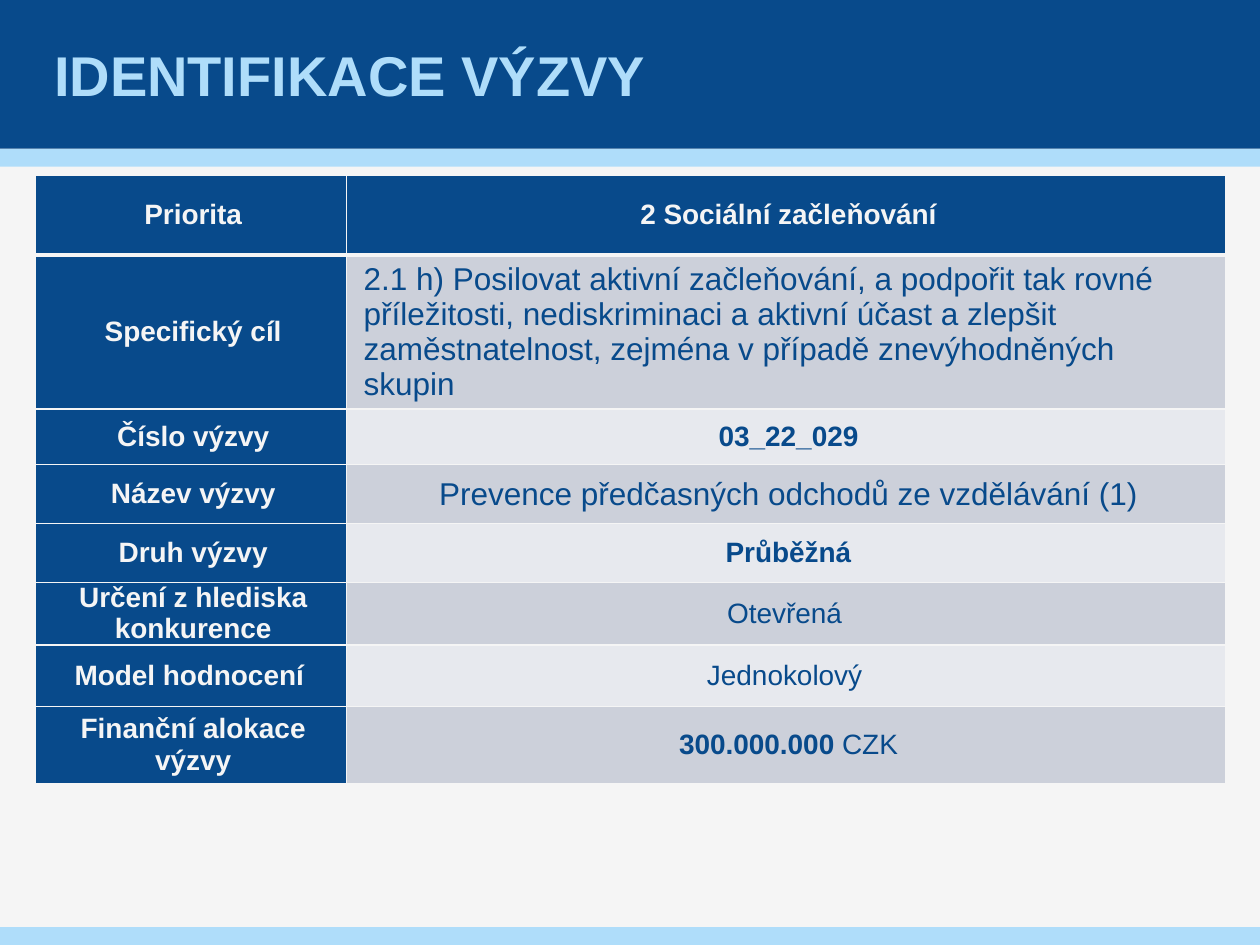
from lxml import etree
from pptx import Presentation
from pptx import util as u
from pptx.dml.color import RGBColor
from pptx.enum import shapes, text
from pptx.oxml.ns import qn

NAVY, SKY, PAPER = "084A8B", "AFDDFA", "F5F5F5"
BANDS = ("E7E9EE", "CCD0DA")
COLUMN_WIDTHS = (6.27, 17.73)
LEFT, CENTER = text.PP_ALIGN.LEFT, text.PP_ALIGN.CENTER

# Row height in cm, label, value as (wording, bold) spans, value format
ROWS = [
    (1.6, "Priorita", [("2 Sociální začleňování", True)], {}),
    (2.62, "Specifický cíl",
     [("2.1 h) Posilovat aktivní začleňování, a podpořit tak rovné příležitosti, "
       "nediskriminaci a aktivní účast a zlepšit zaměstnatelnost, zejména v případě "
       "znevýhodněných skupin", False)],
     {"size": 18, "align": LEFT, "margins": (0.25, 0.13)}),
    (1.12, "Číslo výzvy", [("03_22_029", True)], {"margins": (0.18, 0)}),
    (1.19, "Název výzvy",
     [("Prevence předčasných odchodů ze vzdělávání (1)", False)], {"size": 18}),
    (1.19, "Druh výzvy", [("Průběžná", True)], {}),
    (0.76, "Určení z hlediska konkurence", [("Otevřená ", False)], {}),
    (1.24, "Model hodnocení ", [("Jednokolový ", False)], {}),
    (1.55, "Finanční alokace výzvy", [("300.000.000 ", True), ("CZK", False)], {}),
]


def rgb(value):
    return RGBColor.from_string(value)


def paint(target, color):
    target.fill.solid()
    target.fill.fore_color.rgb = rgb(color)


def write(frame, spans, size=16, color=PAPER, align=CENTER, indent=0, space=0):
    """Fill the first paragraph with (wording, bold) spans."""
    para = frame.paragraphs[0]
    para.alignment = align
    para.space_before = para.space_after = u.Pt(space)
    para._p.get_or_add_pPr().set("marL", str(u.Cm(indent)))
    para._p.get_or_add_pPr().set("indent", "0")
    for wording, bold in spans:
        span = para.add_run()
        span.text = wording
        span.font.name = "Arial"
        span.font.size = u.Pt(size)
        span.font.bold = bold
        span.font.color.rgb = rgb(color)


def add_bar(slide, top, height, color):
    bar = slide.shapes.add_shape(shapes.MSO_SHAPE.RECTANGLE, 0, u.Cm(top),
                                 u.Cm(25.4), u.Cm(height))
    bar.shadow.inherit = False
    bar.line.fill.background()
    paint(bar, color)


def place_title(slide, wording):
    title = slide.shapes.title
    title.left, title.top = u.Cm(0.99), u.Cm(0)
    title.width, title.height = u.Cm(23.39), u.Cm(3)
    frame = title.text_frame
    frame.word_wrap = True
    frame.auto_size = text.MSO_AUTO_SIZE.NONE
    frame.vertical_anchor = text.MSO_ANCHOR.MIDDLE
    frame.margin_left = frame.margin_right = u.Cm(0.1)
    frame.margin_top = frame.margin_bottom = 0
    write(frame, [(wording, True)], size=32, color=SKY, align=LEFT)
    slide.shapes._spTree.append(title._element)  # in front of the bars


def add_borders(cell, top, bottom):
    properties = cell._tc.get_or_add_tcPr()
    for side, points in (("L", 1), ("R", 1), ("T", top), ("B", bottom)):
        line = etree.SubElement(properties, qn(f"a:ln{side}"), w=str(u.Pt(points)))
        fill = etree.SubElement(line, qn("a:solidFill"))
        etree.SubElement(fill, qn("a:srgbClr"), val=PAPER)


def format_cell(cell, spans, fill, row, margins=(0, 0), **style):
    add_borders(cell, top=3 if row == 1 else 1, bottom=3 if row == 0 else 1)
    paint(cell, fill)
    cell.vertical_anchor = text.MSO_ANCHOR.MIDDLE
    cell.margin_left = cell.margin_right = u.Cm(margins[0])
    cell.margin_top = cell.margin_bottom = u.Cm(margins[1])
    write(cell.text_frame, spans, indent=0.1, space=3, **style)


def add_call_table(slide):
    holder = slide.shapes.add_table(len(ROWS), 2, u.Cm(0.71), u.Cm(3.54),
                                    u.Cm(24), u.Cm(12.57))
    table = holder.table
    for column, width in zip(table.columns, COLUMN_WIDTHS):
        column.width = u.Cm(width)
    for row, (height, label, value, style) in enumerate(ROWS):
        table.rows[row].height = u.Cm(height)
        format_cell(table.cell(row, 0), [(label, True)], NAVY, row)
        fill, color = (BANDS[row % 2], NAVY) if row else (NAVY, PAPER)
        format_cell(table.cell(row, 1), value, fill, row, color=color, **style)
    holder.height = u.Cm(12.57)


def main():
    deck = Presentation()
    deck.slide_width, deck.slide_height = u.Cm(25.4), u.Cm(19.05)
    slide = deck.slides.add_slide(deck.slide_layouts[5])
    paint(slide.background, PAPER)
    add_bar(slide, 3, 0.36, SKY)
    add_bar(slide, 0, 3, NAVY)
    add_bar(slide, 18.69, 0.36, SKY)
    place_title(slide, "IDENTIFIKACE VÝZVY")
    add_call_table(slide)
    deck.save("out.pptx")


if __name__ == "__main__":
    main()
